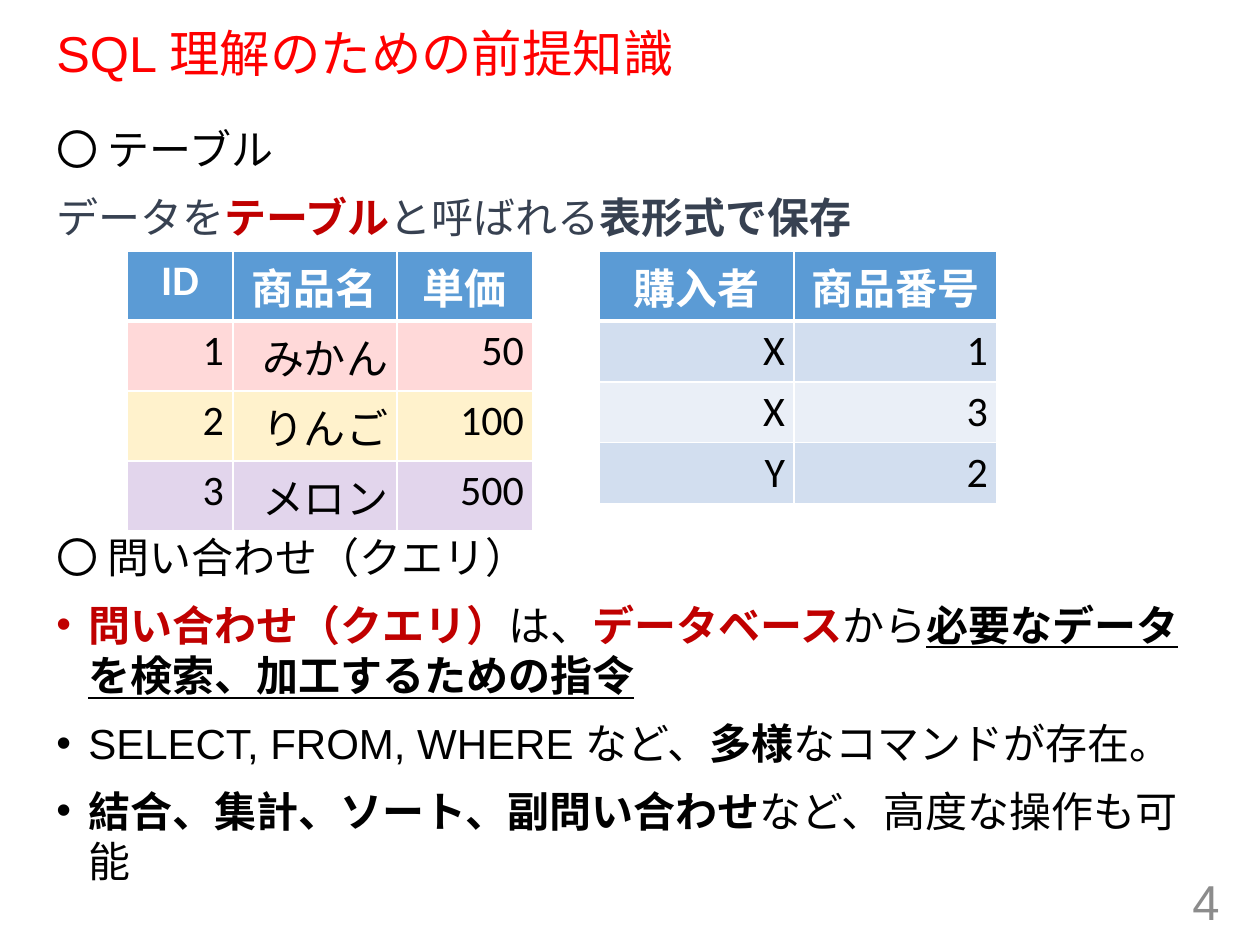
from lxml.etree import SubElement
from pptx import Presentation
from pptx.dml.color import RGBColor
from pptx.enum.text import MSO_ANCHOR, PP_ALIGN
from pptx.oxml.ns import qn
from pptx.util import Emu, Pt

EMU_PER_PX = 914400 / 126
BLACK, WHITE, RED, SLATE = "000000", "FFFFFF", "C00000", "374151"
HEADER, BAND_DARK, BAND_LIGHT = "5B9BD5", "D2DEEF", "EAEFF7"


def px(n):
    return Emu(round(n * EMU_PER_PX))


def rgb(value):
    return RGBColor.from_string(value)


def add_run(p, text, size=24, color=BLACK, font="Arial", bold=False, underline=False):
    r = p.add_run()
    r.text = text
    f = r.font
    f.size, f.name, f.bold, f.underline = Pt(size), font, bold, underline
    f.color.rgb = rgb(color)


def add_textbox(s, box, anchor=MSO_ANCHOR.TOP):
    tf = s.shapes.add_textbox(*map(px, box)).text_frame
    tf.word_wrap = True
    tf.vertical_anchor = anchor
    return tf


def set_bullet(p):
    pPr = p._p.get_or_add_pPr()
    pPr.set("marL", str(px(32)))
    pPr.set("indent", str(-px(32)))
    SubElement(pPr, qn("a:buFont"), typeface="Arial")
    SubElement(pPr, qn("a:buChar"), char="•")


def add_title(s, box, text):
    p = add_textbox(s, box, MSO_ANCHOR.MIDDLE).paragraphs[0]
    p.line_spacing = 0.9
    add_run(p, text, 28.8, "FF0000")


def add_body(s, box, paragraphs):
    """Each paragraph is (bulleted, [(text, run options), ...])."""
    tf = add_textbox(s, box)
    for i, (bulleted, runs) in enumerate(paragraphs):
        p = tf.add_paragraph() if i else tf.paragraphs[0]
        p.space_before = Pt(10)
        if bulleted:
            set_bullet(p)
        for text, options in runs:
            add_run(p, text, **options)


def add_page_number(s, box, number):
    p = add_textbox(s, box, MSO_ANCHOR.MIDDLE).paragraphs[0]
    p.alignment = PP_ALIGN.RIGHT
    add_run(p, number, 28, "8C8C8C")


def style_cell(cell, color, alpha, bottom_width):
    cell.margin_left = cell.margin_right = px(9)
    cell.margin_top = cell.margin_bottom = px(5)
    tcPr = cell._tc.get_or_add_tcPr()
    for side in "LRTB":
        width = bottom_width if side == "B" else 1
        ln = SubElement(tcPr, qn(f"a:ln{side}"), w=str(Pt(width)))
        SubElement(SubElement(ln, qn("a:solidFill")), qn("a:srgbClr"), val=WHITE)
    clr = SubElement(SubElement(tcPr, qn("a:solidFill")), qn("a:srgbClr"), val=color)
    if alpha < 100:
        SubElement(clr, qn("a:alpha"), val=str(alpha * 1000))


def add_data_table(s, box, col_widths, row_heights, rows, fills):
    table = s.shapes.add_table(len(rows), len(col_widths), *map(px, box)).table
    for col, width in zip(table.columns, col_widths):
        col.width = px(width)
    for i, (values, (color, alpha)) in enumerate(zip(rows, fills)):
        table.rows[i].height = px(row_heights[i])
        header = i == 0
        for j, value in enumerate(values):
            cell = table.cell(i, j)
            style_cell(cell, color, alpha, 3 if header else 1)
            p = cell.text_frame.paragraphs[0]
            p.alignment = PP_ALIGN.CENTER if header else PP_ALIGN.RIGHT
            add_run(p, value, color=WHITE if header else BLACK, font="Calibri", bold=header)


def main():
    prs = Presentation()
    prs.slide_width, prs.slide_height = px(1260), px(945)
    s = prs.slides.add_slide(prs.slide_layouts[6])

    add_title(s, (44, 24, 1166, 64), "SQL 理解のための前提知識")

    # Explanation of tables
    strong = dict(bold=True)
    key = dict(color=RED, bold=True, font="Calibri")
    add_body(s, (44, 117, 1173, 130), [
        (False, [("〇 テーブル", {})]),
        (False, [("データを", dict(color=SLATE, font="Calibri")),
                 ("テーブル", key),
                 ("と呼ばれる", dict(color=SLATE, font="Calibri")),
                 ("表形式で保存", dict(color=SLATE, font="Calibri", bold=True))]),
    ])

    # Explanation of queries
    key = dict(color=RED, bold=True)
    add_body(s, (44, 525, 1173, 381), [
        (False, [("〇 問い合わせ（クエリ）", {})]),
        (True, [("問い合わせ（クエリ）", key), ("は、", {}),
                ("データベース", key), ("から", {}),
                ("必要なデータを検索、加工するための指令", dict(bold=True, underline=True))]),
        (True, [("SELECT, FROM, WHERE など、", {}), ("多様", strong),
                ("なコマンドが存在。", {})]),
        (True, [("結合、集計、ソート、副問い合わせ", strong),
                ("など、高度な操作も可能", {})]),
    ])

    add_page_number(s, (948, 876, 284, 50), "4")

    # Products and purchases
    add_data_table(s, (127, 251, 406, 280), (106, 164, 136), [70] * 4,
                   [("ID", "商品名", "単価"), ("1", "みかん", "50"),
                    ("2", "りんご", "100"), ("3", "メロン", "500")],
                   [(HEADER, 100), ("FF0000", 15), ("FFC000", 20), ("7030A0", 20)])
    add_data_table(s, (599, 251, 398, 252), (195, 203), (70, 61, 60, 61),
                   [("購入者", "商品番号"), ("X", "1"), ("X", "3"), ("Y", "2")],
                   [(HEADER, 100), (BAND_DARK, 100), (BAND_LIGHT, 100), (BAND_DARK, 100)])

    prs.save("out.pptx")


if __name__ == "__main__":
    main()
